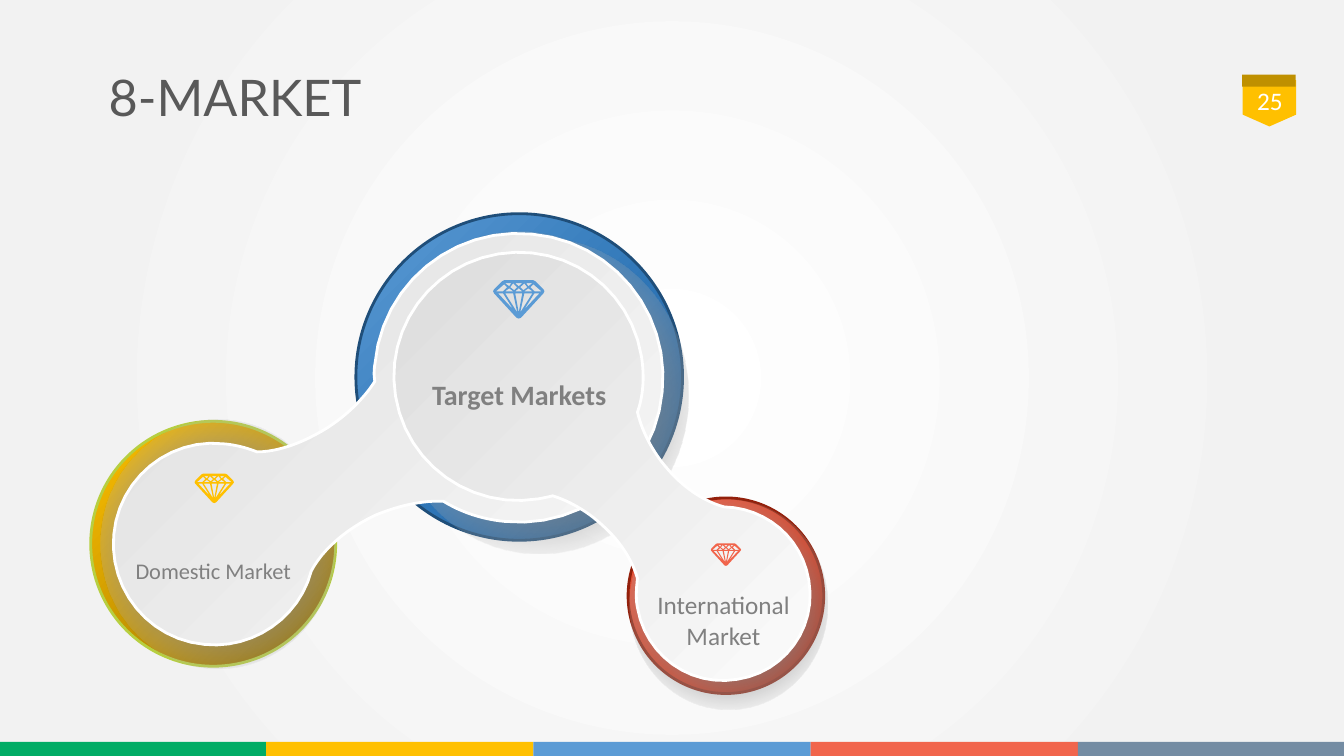
from math import cos, sin, radians
from lxml import etree
from pptx import Presentation
from pptx.dml.color import RGBColor
from pptx.enum.shapes import MSO_SHAPE as Shape
from pptx.enum.text import MSO_ANCHOR as Anchor, PP_ALIGN as Align
from pptx.oxml.ns import qn
from pptx.util import Inches, Pt

WHITE = RGBColor(0xFF, 0xFF, 0xFF)
DARK = RGBColor(0x59, 0x59, 0x59)
GRAY = RGBColor(0x80, 0x80, 0x80)
GREEN = RGBColor(0x00, 0xAC, 0x65)
GOLD = RGBColor(0xFF, 0xC0, 0x00)
BROWN = RGBColor(0xBF, 0x90, 0x00)
BLUE = RGBColor(0x5B, 0x9B, 0xD5)
RED = RGBColor(0xF1, 0x65, 0x4C)
SLATE = RGBColor(0x74, 0x8C, 0xA3)
LIME = RGBColor(0xB7, 0xCF, 0x41)
NAVY = RGBColor(0x1F, 0x4E, 0x79)
MAROON = RGBColor(0x93, 0x20, 0x0B)

CENTER = (50, 50, 50, 50)
CORNER = (0, 0, 100, 100)
# Gradient stops: position, colour, opacity in percent
BACK = [(0, "FFFFFF", 100), (81, "F2F2F2", 100), (100, "F2F2F2", 100)]
SHADE = [(33, "717171", 100), (82, "BFBFBF", 0), (100, "FFFFFF", 100)]
PALE = [(0, "D9D9D9", 100), (100, "FFFFFF", 100)]

BARS = [(2.64, GREEN), (2.65, GOLD), (2.75, BLUE), (2.65, RED), (2.64, SLATE)]

# Left, top, size, line colour, gradient colours, shade boxes
RINGS = [
    (0.9, 4.18, 2.43, LIME, ("806000", "BF9000", "FFC000"),
     [(1, 4.16, 2.33, 2.47)]),
    (6.23, 4.94, 1.94, MAROON, ("93200B", "DD3011", "F1654C"),
     [(6.24, 4.96, 1.97, 2.08)]),
    (3.53, 2.12, 3.24, NAVY, ("1F4E79", "2E75B6", "5B9BD5"),
     [(3.87, 2.36, 2.96, 3.13), (3.73, 2.3, 2.84, 2.87)]),
]

# Box centre, turn, start point, cubic curves
LINKS = [
    ((3.865, 4.535), 328.2, (5.28, 2.32), [
        (6.07, 2.39, 6.65, 3.09, 6.57, 3.88),
        (6.5, 4.67, 5.8, 5.25, 5.01, 5.17),
        (4.79, 5.15, 4.58, 5.08, 4.4, 4.97),
        (4.2, 4.96, 3.96, 5.01, 3.72, 5.11),
        (3.43, 5.25, 3.2, 5.45, 3.09, 5.66),
        (2.97, 6.12, 2.52, 6.44, 2.03, 6.39),
        (1.48, 6.34, 1.08, 5.85, 1.13, 5.3),
        (1.18, 4.75, 1.67, 4.34, 2.22, 4.4),
        (2.34, 4.41, 2.45, 4.44, 2.55, 4.48),
        (2.76, 4.48, 3.01, 4.39, 3.25, 4.24),
        (3.45, 4.11, 3.61, 3.95, 3.72, 3.78),
        (3.71, 3.73, 3.71, 3.67, 3.72, 3.61),
        (3.79, 2.82, 4.49, 2.24, 5.28, 2.32)]),
    ((6.085, 4.625), 223.6, (3.93, 3.93), [
        (3.82, 3.26, 4.28, 2.63, 4.95, 2.52),
        (5.63, 2.41, 6.26, 2.86, 6.37, 3.54),
        (6.4, 3.73, 6.39, 3.92, 6.33, 4.09),
        (6.37, 4.26, 6.46, 4.45, 6.6, 4.62),
        (6.78, 4.84, 7, 4.98, 7.19, 5.03),
        (7.6, 5.04, 7.96, 5.33, 8.03, 5.76),
        (8.11, 6.23, 7.79, 6.67, 7.32, 6.74),
        (6.85, 6.82, 6.41, 6.5, 6.33, 6.03),
        (6.31, 5.93, 6.32, 5.83, 6.33, 5.74),
        (6.28, 5.56, 6.16, 5.37, 5.98, 5.21),
        (5.83, 5.07, 5.65, 4.97, 5.49, 4.92),
        (5.45, 4.93, 5.4, 4.94, 5.35, 4.95),
        (4.68, 5.06, 4.04, 4.61, 3.93, 3.93)]),
]

# Gem outline and facets on a grid 51 wide; the right half mirrors the left
GEM = 51
EDGE = [(25.5, 38), (24, 37.6), (23, 37), (1, 13), (0, 11), (1, 9), (9, 1), (11, 0)]
SIDE = [
    [(11, 4), (14, 7), (10, 11), (3, 11)],
    [(20, 29), (5, 13), (10, 13)],
    [(20, 13), (24, 32), (12, 13)],
    [(16, 8), (20, 11), (12, 11)],
    [(16, 6), (12, 3), (18, 3)],
    [(21, 10), (17, 7), (20, 3), (24, 7)],
]
MIDDLE = [
    [(25.5, 6), (22, 3), (29, 3)],
    [(29, 13), (25.5, 32), (22, 13)],
    [(29, 11), (22, 11), (25.5, 8)],
]
GEMS = [(4.89, 2.78, 0.51, BLUE), (1.93, 4.7, 0.39, GOLD), (7.05, 5.39, 0.3, RED)]

# Text, box, size, bold
LABELS = [
    ("Target Markets", (4.11, 3.5, 2.08, 0.96), 20, True),
    ("Domestic Market", (1.17, 5.28, 1.89, 0.57), 16, False),
    ("International Market", (6.23, 5.6, 1.89, 0.88), 18, False),
]


def blend(parent, stops, focus=None, angle=0):
    """Swap the solid fill under parent for a gradient."""
    grad = etree.Element(qn("a:gradFill"), rotWithShape="1")
    group = etree.SubElement(grad, qn("a:gsLst"))
    for pos, color, alpha in stops:
        stop = etree.SubElement(group, qn("a:gs"), pos=str(pos * 1000))
        tone = etree.SubElement(stop, qn("a:srgbClr"), val=color)
        if alpha < 100:
            etree.SubElement(tone, qn("a:alpha"), val=str(alpha * 1000))
    if focus:
        path = etree.SubElement(grad, qn("a:path"), path="circle")
        sides = {k: str(v * 1000) for k, v in zip("ltrb", focus)}
        etree.SubElement(path, qn("a:fillToRect"), **sides)
    else:
        etree.SubElement(grad, qn("a:lin"), ang=str(angle * 60000), scaled="0")
    parent.replace(parent.find(qn("a:solidFill")), grad)


def style(shape, fill, line=None):
    shape.shadow.inherit = False
    shape.fill.solid()
    shape.fill.fore_color.rgb = fill
    if line is None:
        shape.line.fill.background()
    else:
        shape.line.color.rgb = line
        shape.line.width = Pt(2)
    return shape


def add(slide, kind, box, fill, line=None):
    shape = slide.shapes.add_shape(kind, *map(Inches, box))
    return style(shape, fill, line)


def outline(slide, loops):
    """Build one freeform from closed loops of points in inches."""
    loops = [[(Inches(x), Inches(y)) for x, y in loop] for loop in loops]
    pen = slide.shapes.build_freeform(*loops[0][0])
    for i, loop in enumerate(loops):
        if i:
            pen.move_to(*loop[0])
        pen.add_line_segments(loop[1:], close=True)
    return pen.convert_to_shape()


def trace(start, curves, steps=12):
    """Points along a chain of cubic curves."""
    points = [start]
    for a, b, c, d, e, f in curves:
        x, y = points[-1]
        for i in range(1, steps + 1):
            t = i / steps
            u = 1 - t
            w = (u ** 3, 3 * u * u * t, 3 * u * t * t, t ** 3)
            points.append((w[0] * x + w[1] * a + w[2] * c + w[3] * e,
                           w[0] * y + w[1] * b + w[2] * d + w[3] * f))
    return points


def turn(points, mid, angle):
    c, s = cos(radians(angle)), sin(radians(angle))
    mx, my = mid
    return [(mx + (x - mx) * c - (y - my) * s,
             my + (x - mx) * s + (y - my) * c) for x, y in points]


def mirror(loop):
    return [(GEM - x, y) for x, y in reversed(loop)]


def write(slide, text, box, size, color, font="Calibri", align=Align.CENTER,
          bold=False, anchor=Anchor.MIDDLE):
    frame = slide.shapes.add_textbox(*map(Inches, box)).text_frame
    frame.word_wrap = True
    frame.vertical_anchor = anchor
    para = frame.paragraphs[0]
    para.text = text
    para.alignment = align
    para.font.name, para.font.size, para.font.bold = font, Pt(size), bold
    para.font.color.rgb = color
    return frame


def main():
    deck = Presentation()
    deck.slide_width, deck.slide_height = Inches(13.33), Inches(7.5)
    slide = deck.slides.add_slide(deck.slide_layouts[6])
    slide.background.fill.solid()
    blend(next(slide.element.iter(qn("p:bgPr"))), BACK, CENTER)

    flag = add(slide, Shape.PENTAGON, (12.36, 0.76, 0.46, 0.53), GOLD)
    flag.adjustments[0] = 0.255
    flag.rotation = 90
    add(slide, Shape.RECTANGLE, (12.32, 0.74, 0.53, 0.12), BROWN)
    left = 0
    for width, color in BARS:
        add(slide, Shape.RECTANGLE, (left, 7.36, width, 0.14), color)
        left += width

    title = write(slide, "8-MARKET", (0.98, 0.59, 11.7, 0.8), 36, DARK, "Lato", Align.LEFT)
    title.paragraphs[0].line_spacing = 0.9
    write(slide, "25", (12.29, 0.74, 0.61, 0.52), 18, WHITE)

    for x, y, size, line, colors, shades in RINGS:
        ring = add(slide, Shape.OVAL, (x, y, size, size), WHITE, line)
        stops = [(pos, color, 100) for pos, color in zip((0, 43, 100), colors)]
        blend(ring.element.spPr, stops, angle=225)
        for box in shades:
            blend(add(slide, Shape.OVAL, box, GRAY).element.spPr, SHADE, CENTER)

    for mid, angle, start, curves in LINKS:
        link = outline(slide, [turn(trace(start, curves), mid, -angle)])
        style(link, WHITE, WHITE)
        link.rotation = angle
        blend(link.element.spPr, PALE, CORNER)

    gem = [EDGE + mirror(EDGE[1:])] + SIDE + [mirror(f) for f in SIDE] + MIDDLE
    for x, y, width, color in GEMS:
        k = width / GEM
        loops = [[(x + px * k, y + py * k) for px, py in loop] for loop in gem]
        style(outline(slide, loops), color)

    for text, box, size, bold in LABELS:
        frame = write(slide, text, box, size, GRAY, bold=bold, anchor=Anchor.TOP)
        frame.margin_top = Inches(0.25)

    deck.save("out.pptx")


if __name__ == "__main__":
    main()
